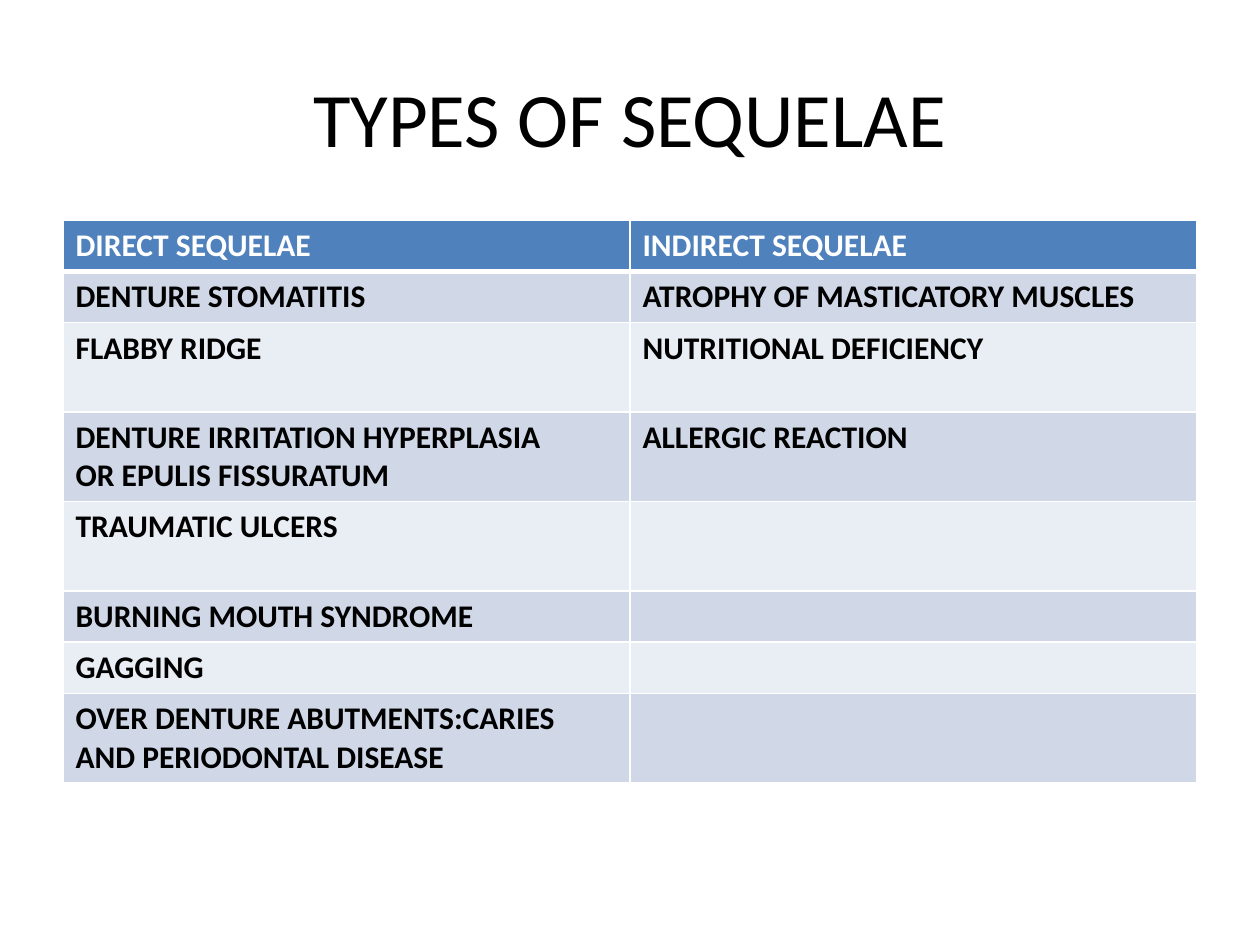
from lxml import etree
from pptx import Presentation
from pptx.dml.color import RGBColor
from pptx.enum.text import MSO_ANCHOR, PP_ALIGN
from pptx.oxml.ns import qn
from pptx.util import Inches, Pt

CENTER = PP_ALIGN.CENTER
MIDDLE = MSO_ANCHOR.MIDDLE
TITLE_ONLY = 5
FONT = "Calibri"
COLORS = {
    "text": "000000",
    "line": "FFFFFF",
    "header": "4F81BD",
    "odd": "D0D8E8",
    "even": "E9EDF4",
}
SINGLE_ROW, DOUBLE_ROW = 0.4, 0.71
SEQUELAE = [
    (SINGLE_ROW, "DIRECT SEQUELAE", "INDIRECT SEQUELAE"),
    (SINGLE_ROW, "DENTURE STOMATITIS", "ATROPHY OF MASTICATORY MUSCLES"),
    (DOUBLE_ROW, "FLABBY RIDGE", "NUTRITIONAL DEFICIENCY"),
    (DOUBLE_ROW, "DENTURE IRRITATION HYPERPLASIA\nOR EPULIS FISSURATUM", "ALLERGIC REACTION"),
    (DOUBLE_ROW, "TRAUMATIC ULCERS", ""),
    (SINGLE_ROW, "BURNING MOUTH SYNDROME", ""),
    (SINGLE_ROW, "GAGGING", ""),
    (DOUBLE_ROW, "OVER DENTURE ABUTMENTS:CARIES AND PERIODONTAL DISEASE", ""),
]


class SlideBuilder:
    """Holds the style and the current slide, and adds its elements."""

    def __init__(self, slide):
        self.slide = slide

    def add_text(self, frame, text, size, color, bold=False, align=None):
        for index, line in enumerate(text.split("\n") if text else []):
            paragraph = frame.add_paragraph() if index else frame.paragraphs[0]
            paragraph.alignment = align
            run = paragraph.add_run()
            run.text = line
            run.font.name = FONT
            run.font.size = Pt(size)
            run.font.bold = bold
            run.font.color.rgb = RGBColor.from_string(COLORS[color])

    def title(self, text, left, top, width, height):
        heading = self.slide.shapes.title
        heading.left, heading.top = Inches(left), Inches(top)
        heading.width, heading.height = Inches(width), Inches(height)
        heading.text_frame.vertical_anchor = MIDDLE
        self.add_text(heading.text_frame, text, 44, "text", align=CENTER)

    def borders(self, cell, top, bottom):
        properties = cell._tc.get_or_add_tcPr()
        for side, points in (("L", 1), ("R", 1), ("T", top), ("B", bottom)):
            border = etree.SubElement(properties, qn(f"a:ln{side}"), w=str(Pt(points)))
            fill = etree.SubElement(border, qn("a:solidFill"))
            etree.SubElement(fill, qn("a:srgbClr"), val=COLORS["line"])

    def table(self, rows, left, top, width):
        column_count = len(rows[0]) - 1
        total_height = sum(height for height, *_ in rows)
        grid = self.slide.shapes.add_table(
            len(rows), column_count,
            Inches(left), Inches(top), Inches(width), Inches(total_height),
        ).table
        for column in grid.columns:
            column.width = Inches(width / column_count)
        for row_index, (height, *texts) in enumerate(rows):
            grid.rows[row_index].height = Inches(height)
            is_header = row_index == 0
            band = "header" if is_header else ("even", "odd")[row_index % 2]
            for cell, text in zip(grid.rows[row_index].cells, texts):
                self.borders(cell, 3 if row_index == 1 else 1, 3 if is_header else 1)
                cell.fill.solid()
                cell.fill.fore_color.rgb = RGBColor.from_string(COLORS[band])
                self.add_text(cell.text_frame, text, 18, "line" if is_header else "text", bold=True)


def main():
    deck = Presentation()
    deck.slide_width, deck.slide_height = Inches(10), Inches(7.5)
    builder = SlideBuilder(deck.slides.add_slide(deck.slide_layouts[TITLE_ONLY]))
    builder.title("TYPES OF SEQUELAE", 0.5, 0.3, 9, 1.25)
    builder.table(SEQUELAE, 0.5, 1.75, 9)
    deck.save("out.pptx")


if __name__ == "__main__":
    main()
